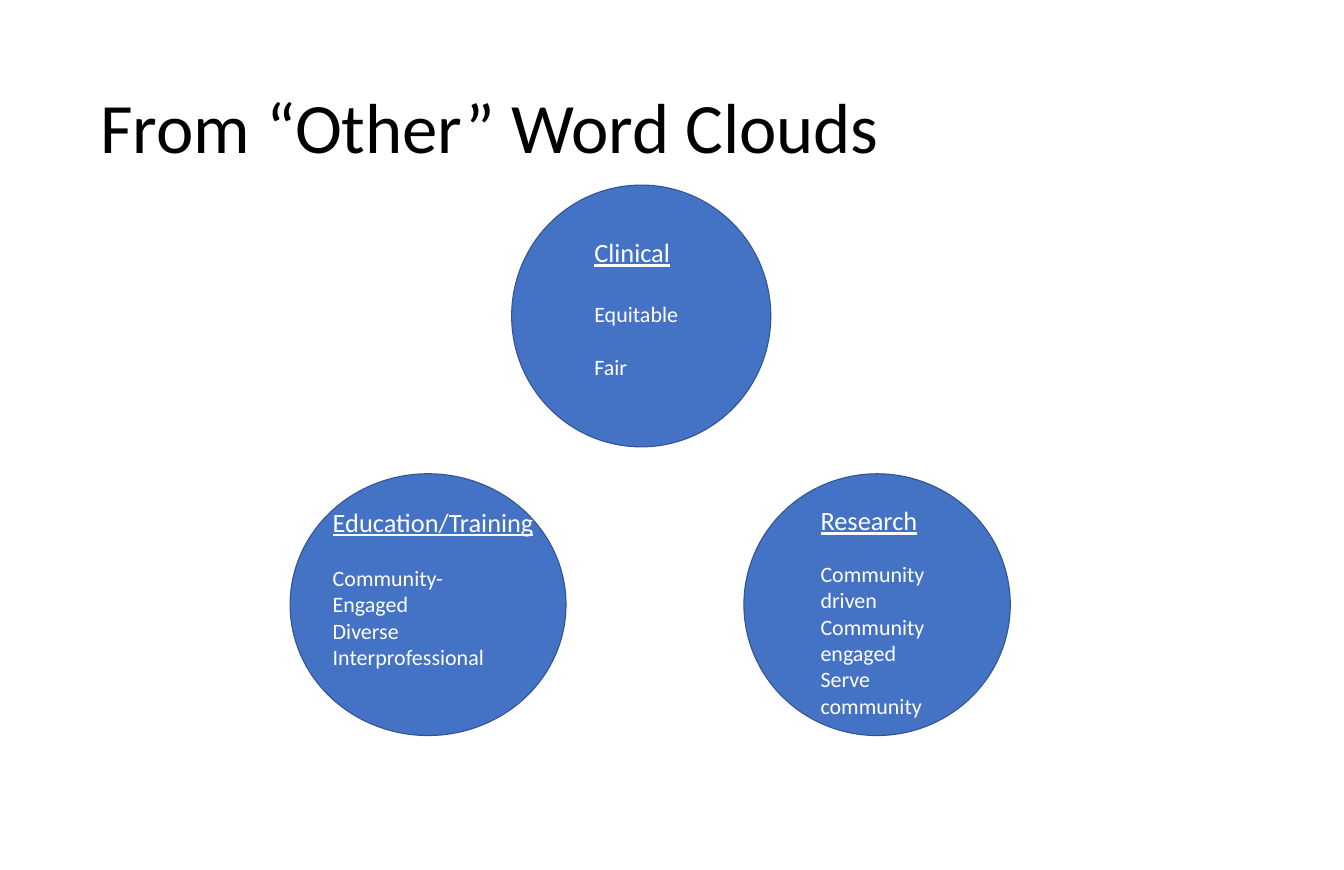
import pptx
import pptx.dml.color
import pptx.enum.shapes
import pptx.enum.text
import pptx.util

Pt = pptx.util.Pt
BLUE = pptx.dml.color.RGBColor(0x44, 0x72, 0xC4)
DARK_BLUE = pptx.dml.color.RGBColor(0x32, 0x54, 0x91)
WHITE = pptx.dml.color.RGBColor(0xFF, 0xFF, 0xFF)
BLACK = pptx.dml.color.RGBColor(0x00, 0x00, 0x00)
FONT = "Calibri"

# Each theme: circle box, words box, heading, words, gap under heading, gap between words
THEMES = [
    ((466, 168.5, 236, 238.3), (534.2, 211.7, 155.5, 138.2),
     "Clinical", ["Equitable", "Fair"], 29.3, 24.4),
    ((677.5, 431.3, 242.6, 238.3), (740.2, 455.8, 155.5, 203.8),
     "Research", ["Community driven", "Community engaged", "Serve community"], 22, 0),
    ((264.2, 431.3, 251.3, 238.3), (295.9, 457.2, 202.3, 157.7),
     "Education/Training", ["Community-", "Engaged", "Diverse", "Interprofessional"], 24.4, 0),
]


def format_runs(paragraph, size, color, underline=False):
    for run in paragraph.runs:
        run.font.name = FONT
        run.font.size = Pt(size)
        run.font.color.rgb = color
        run.font.underline = underline


def set_title(slide, text):
    title = slide.shapes.title
    title.left, title.top, title.width, title.height = map(Pt, (84.2, 42.5, 1055.5, 153.4))
    frame = title.text_frame
    frame.text = text
    frame.word_wrap = True
    frame.auto_size = pptx.enum.text.MSO_AUTO_SIZE.NONE
    frame.vertical_anchor = pptx.enum.text.MSO_ANCHOR.MIDDLE
    heading = frame.paragraphs[0]
    heading.alignment = pptx.enum.text.PP_ALIGN.LEFT
    heading.line_spacing = 0.9
    format_runs(heading, 64.5, BLACK)


def add_circle(slide, box):
    circle = slide.shapes.add_shape(
        pptx.enum.shapes.MSO_SHAPE.FLOWCHART_CONNECTOR, *map(Pt, box))
    circle.shadow.inherit = False
    circle.fill.solid()
    circle.fill.fore_color.rgb = BLUE
    circle.line.color.rgb = DARK_BLUE
    circle.line.width = Pt(1)


def add_words(slide, box, heading, words, heading_gap, word_gap):
    """Add an underlined heading with its words listed below."""
    frame = slide.shapes.add_textbox(*map(Pt, box)).text_frame
    frame.word_wrap = True
    frame.auto_size = pptx.enum.text.MSO_AUTO_SIZE.SHAPE_TO_FIT_TEXT
    frame.text = "\n".join([heading, *words])
    heading_line, *word_lines = frame.paragraphs
    format_runs(heading_line, 24, WHITE, underline=True)
    for index, word_line in enumerate(word_lines):
        word_line.space_before = Pt(word_gap if index else heading_gap)
        format_runs(word_line, 20, WHITE)


def main():
    presentation = pptx.Presentation()
    presentation.slide_width = Pt(1224)
    presentation.slide_height = Pt(792)
    slide = presentation.slides.add_slide(presentation.slide_layouts[5])
    set_title(slide, "From “Other” Word Clouds")
    for circle_box, words_box, heading, words, heading_gap, word_gap in THEMES:
        add_circle(slide, circle_box)
        add_words(slide, words_box, heading, words, heading_gap, word_gap)
    presentation.save("out.pptx")


if __name__ == "__main__":
    main()
